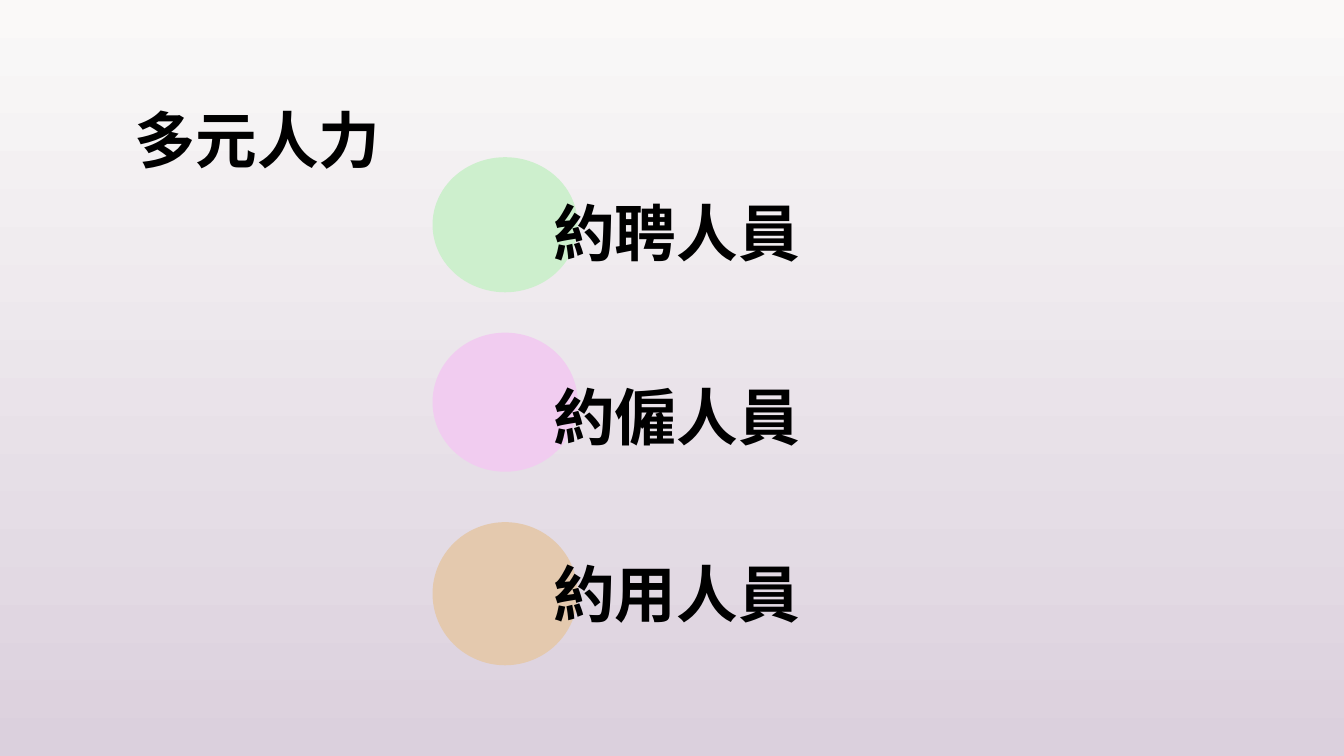
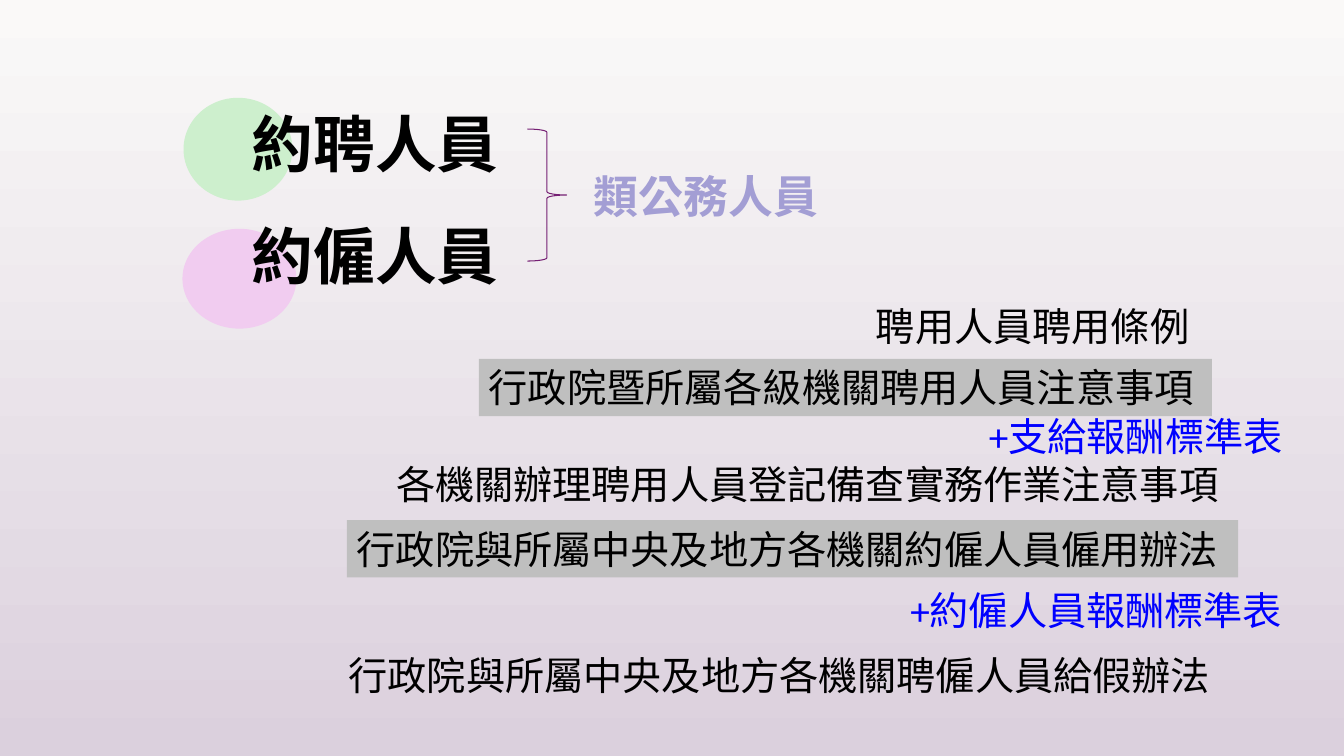
import pptx
import pptx.dml.color
import pptx.enum.lang
import pptx.enum.shapes
import pptx.enum.text
import pptx.util

RGBColor = pptx.dml.color.RGBColor
MSO_SHAPE = pptx.enum.shapes.MSO_SHAPE
AUTO_SIZE = pptx.enum.text.MSO_AUTO_SIZE

BLACK = RGBColor(0x00, 0x00, 0x00)
BLUE = RGBColor(0x00, 0x00, 0xFF)
LAVENDER = RGBColor(0xA3, 0x9E, 0xD4)
PURPLE = RGBColor(0x75, 0x1F, 0x73)
GREY = RGBColor(0xBF, 0xBF, 0xBF)
GREEN = RGBColor(0xCD, 0xEF, 0xCD)
PINK = RGBColor(0xF1, 0xCC, 0xF0)
TAN = RGBColor(0xE4, 0xC9, 0xAE)
BACKGROUND = (RGBColor(0xFA, 0xF9, 0xF8), RGBColor(0xDB, 0xD0, 0xDD))

PX = 9144  # 100 px to the inch
SLIDE_SIZE = (1333, 750)
TITLE_ONLY = 5
HEADING = {"size": 44, "bold": True}
HEADING_SIZE = (267, 84)
RULE_HEIGHT = 57

# Each staff type: text, text left and top, circle box, circle colour
STAFF_TYPES = [
    ("約聘人員", (539, 188), (429, 156, 144, 134), GREEN),
    ("約僱人員", (539, 371), (429, 330, 144, 138), PINK),
    ("約用人員", (539, 547), (429, 518, 144, 142), TAN),
]
CIVIL_SERVANT_LIKE = [
    ("約聘人員", (240, 100), (182, 97, 108, 102), GREEN),
    ("約僱人員", (240, 211), (181, 227, 113, 99), PINK),
]
BRACE = (523, 128, 39, 131)

# Each rule: text, left, top, width, format
RULES = [
    ("聘用人員聘用條例", 859, 295, 334, {}),
    ("行政院暨所屬各級機關聘用人員注意事項", 475, 356, 727, {"fill": GREY}),
    ("+支給報酬標準表", 971, 404, 321, {"color": BLUE}),
    ("各機關辦理聘用人員登記備查實務作業注意事項", 383, 452, 845, {}),
    ("行政院與所屬中央及地方各機關約僱人員僱用辦法", 344, 516, 884,
     {"fill": GREY, "font": "Arial"}),
    ("+約僱人員報酬標準表", 893, 577, 400, {"color": BLUE}),
    ("行政院與所屬中央及地方各機關聘僱人員給假辦法", 336, 641, 884, {"font": "Arial"}),
]


def emu(box):
    return [pptx.util.Emu(length * PX) for length in box]


def write(shape, text, size=28, bold=False, color=BLACK, font="Calibri",
          fill=None, wrap=False):
    frame = shape.text_frame
    frame.word_wrap = wrap
    frame.auto_size = AUTO_SIZE.NONE if wrap else AUTO_SIZE.SHAPE_TO_FIT_TEXT
    frame.vertical_anchor = pptx.enum.text.MSO_ANCHOR.TOP
    if fill is not None:
        shape.fill.solid()
        shape.fill.fore_color.rgb = fill
    paragraph = frame.paragraphs[0]
    paragraph.alignment = pptx.enum.text.PP_ALIGN.LEFT
    run = paragraph.add_run()
    run.text = text
    run.font.size = pptx.util.Pt(size)
    run.font.bold = bold
    run.font.name = font
    run.font.color.rgb = color
    run.font.language_id = pptx.enum.lang.MSO_LANGUAGE_ID.TRADITIONAL_CHINESE


def add_text(slide, text, box, **text_format):
    write(slide.shapes.add_textbox(*emu(box)), text, **text_format)


def add_titled_slide(presentation, text, box, **text_format):
    slide = presentation.slides.add_slide(presentation.slide_layouts[TITLE_ONLY])
    title = slide.shapes.title
    title.left, title.top, title.width, title.height = emu(box)
    write(title, text, bold=True, wrap=True, **text_format)
    return slide


def add_staff(slide, staff):
    """Draw every circle, then the headings over them."""
    for _, _, circle_box, color in staff:
        circle = slide.shapes.add_shape(MSO_SHAPE.OVAL, *emu(circle_box))
        circle.shadow.inherit = False
        circle.fill.solid()
        circle.fill.fore_color.rgb = color
        circle.line.fill.background()
    for text, position, _, _ in staff:
        add_text(slide, text, position + HEADING_SIZE, **HEADING)


def add_brace(slide, box):
    brace = slide.shapes.add_shape(MSO_SHAPE.RIGHT_BRACE, *emu(box))
    brace.shadow.inherit = False
    brace.fill.background()
    brace.line.color.rgb = PURPLE
    brace.line.width = pptx.util.Pt(0.75)


def set_background(master):
    fill = master.background.fill
    fill.gradient()
    fill.gradient_angle = 270
    for stop, color in zip(fill.gradient_stops, BACKGROUND):
        stop.color.rgb = color


def main():
    presentation = pptx.Presentation()
    presentation.slide_width, presentation.slide_height = emu(SLIDE_SIZE)
    set_background(presentation.slide_master)

    overview = add_titled_slide(presentation, "多元人力", (123, 96, 273, 84), size=44)
    add_staff(overview, STAFF_TYPES)

    regulations = add_titled_slide(presentation, "類公務人員", (579, 162, 260, 64),
                                   size=32, color=LAVENDER)
    add_staff(regulations, CIVIL_SERVANT_LIKE)
    add_brace(regulations, BRACE)
    for text, left, top, width, text_format in RULES:
        add_text(regulations, text, (left, top, width, RULE_HEIGHT), **text_format)

    presentation.save("out.pptx")


if __name__ == "__main__":
    main()
